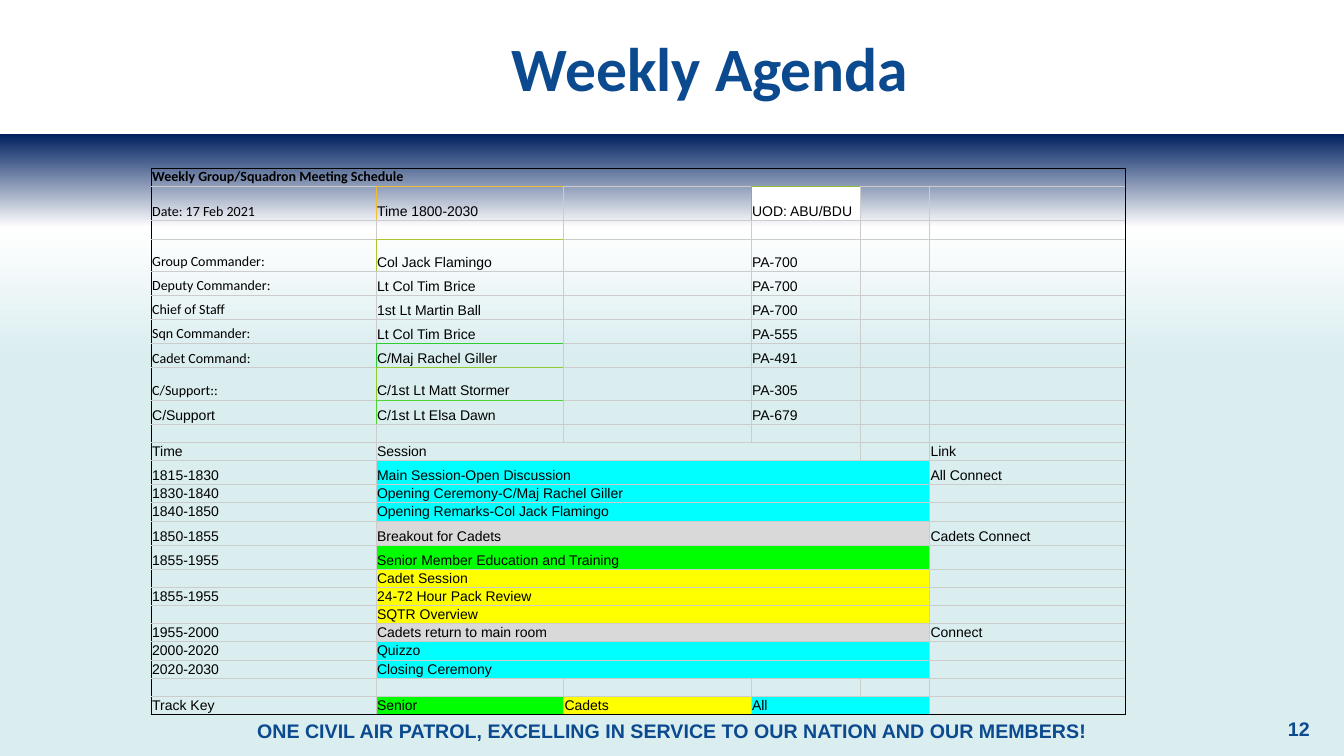
from lxml import etree
from pptx import Presentation
from pptx.dml.color import RGBColor
from pptx.enum.shapes import MSO_SHAPE
from pptx.enum.text import MSO_ANCHOR, PP_ALIGN
from pptx.oxml.ns import qn
from pptx.util import Inches, Pt

RECTANGLE = MSO_SHAPE.RECTANGLE
MIDDLE, BOTTOM = MSO_ANCHOR.MIDDLE, MSO_ANCHOR.BOTTOM
CENTER, RIGHT = PP_ALIGN.CENTER, PP_ALIGN.RIGHT

NAVY, BLUE, BLACK, GRID = "002060", "0B4A8F", "000000", "CCCCCC"
SENIOR, CADETS, ALL, ROOM = "00FF00", "FFFF00", "00FFFF", "D9D9D9"
SHORT, MEDIUM, TALL = 0.18, 0.24, 0.32
COLUMN_WIDTHS = [2.23, 1.86, 1.86, 1.08, 0.69, 1.94]
LAST_LABEL_ROW = 8
ACCENTS = {(1, 1): "F0BE32", (1, 3): "90C032", (3, 1): "B0C532",
           (7, 1): "30CD32", (8, 1): "90CB32", (9, 1): "50D532"}

STAFF = [
    (TALL, "Group Commander:", "Col Jack Flamingo", "PA-700"),
    (MEDIUM, "Deputy Commander:", "Lt Col Tim Brice", "PA-700"),
    (MEDIUM, "Chief of Staff", "1st Lt Martin Ball", "PA-700"),
    (MEDIUM, "Sqn Commander:", "Lt Col Tim Brice", "PA-555"),
    (MEDIUM, "Cadet Command:", "C/Maj Rachel Giller", "PA-491"),
    (TALL, "C/Support::", "C/1st Lt Matt Stormer", "PA-305"),
    (MEDIUM, "C/Support", "C/1st Lt Elsa Dawn", "PA-679"),
]
SESSIONS = [
    (MEDIUM, "1815-1830", "Main Session-Open Discussion", ALL, "All Connect"),
    (SHORT, "1830-1840", "Opening Ceremony-C/Maj Rachel Giller", ALL, ""),
    (SHORT, "1840-1850", "Opening Remarks-Col Jack Flamingo", ALL, ""),
    (MEDIUM, "1850-1855", "Breakout for Cadets", ROOM, "Cadets Connect"),
    (MEDIUM, "1855-1955", "Senior Member Education and Training", SENIOR, ""),
    (SHORT, "", "Cadet Session", CADETS, ""),
    (SHORT, "1855-1955", "24-72 Hour Pack Review", CADETS, ""),
    (SHORT, "", "SQTR Overview", CADETS, ""),
    (SHORT, "1955-2000", "Cadets return to main room", ROOM, "Connect"),
    (SHORT, "2000-2020", "Quizzo", ALL, ""),
    (SHORT, "2020-2030", "Closing Ceremony", ALL, ""),
]


def color(value):
    """Turn a hex string into a colour."""
    return RGBColor.from_string(value)


def plain(*texts):
    """Describe six unfilled, unmerged cells, the last ones empty."""
    return [(text, 1, None) for text in texts + ("",) * (6 - len(texts))]


def agenda_rows():
    """List each row's height and its cells as text, span and fill."""
    rows = [
        (SHORT, [("Weekly Group/Squadron Meeting Schedule", 6, None)]),
        (0.34, plain("Date: 17 Feb 2021", "Time 1800-2030", "")[:3]
         + [("UOD: ABU/BDU", 1, "FFFFFF")] + plain()[:2]),
        (SHORT, plain()),
    ]
    rows += [(height, plain(role, name, "", code)) for height, role, name, code in STAFF]
    rows += [
        (SHORT, plain()),
        (SHORT, [("Time", 1, None), ("Session", 3, None), ("", 1, None), ("Link", 1, None)]),
    ]
    rows += [(height, [(time, 1, None), (session, 4, track), (link, 1, None)])
             for height, time, session, track, link in SESSIONS]
    rows += [
        (SHORT, plain()),
        (SHORT, [("Track Key", 1, None), ("Senior", 1, SENIOR), ("Cadets", 1, CADETS),
                 ("All", 2, ALL), ("", 1, None)]),
    ]
    return rows


class AgendaSlide:
    """Hold the slide and draw its elements in one style."""

    def __init__(self, presentation):
        """Add a title-only slide."""
        self.slide = presentation.slides.add_slide(presentation.slide_layouts[5])

    def add_run(self, paragraph, text, size, font="Arial", fill=BLACK, bold=False):
        """Add a formatted run."""
        run = paragraph.add_run()
        run.text = text
        run.font.name, run.font.size, run.font.bold = font, Pt(size), bold
        run.font.color.rgb = color(fill)

    def title(self, text, left, top, width, height):
        """Place and format the title."""
        shape = self.slide.shapes.title
        shape.left, shape.top = Inches(left), Inches(top)
        shape.width, shape.height = Inches(width), Inches(height)
        shape.text_frame.vertical_anchor = MIDDLE
        paragraph = shape.text_frame.paragraphs[0]
        paragraph.alignment = CENTER
        self.add_run(paragraph, text, 44, "Calibri", BLUE, True)

    def gradient_panel(self, left, top, width, height, stops):
        """Draw a panel that fades from top to bottom."""
        shape = self.slide.shapes.add_shape(
            RECTANGLE, Inches(left), Inches(top), Inches(width), Inches(height))
        shape.shadow.inherit = False
        shape.line.fill.background()
        shape.fill.gradient()
        shape.fill.gradient_angle = 270
        stop_list = next(shape.element.iter(qn("a:gsLst")))
        for old_stop in list(stop_list):
            stop_list.remove(old_stop)
        for percent, value in stops:
            stop = etree.SubElement(stop_list, qn("a:gs"), pos=str(percent * 1000))
            etree.SubElement(stop, qn("a:srgbClr"), val=value)

    def text(self, text, left, top, width, height, alignment):
        """Add a line of bold blue text."""
        shape = self.slide.shapes.add_textbox(
            Inches(left), Inches(top), Inches(width), Inches(height))
        shape.text_frame.word_wrap = True
        paragraph = shape.text_frame.paragraphs[0]
        paragraph.alignment = alignment
        self.add_run(paragraph, text, 14, fill=BLUE, bold=True)

    def cell_text(self, cell, text, font, bold):
        """Write a small, bottom-anchored cell text."""
        cell.margin_left = cell.margin_right = cell.margin_bottom = Inches(0.01)
        cell.margin_top = 0
        cell.vertical_anchor = BOTTOM
        paragraph = cell.text_frame.paragraphs[0]
        if text:
            self.add_run(paragraph, text, 10, font, bold=bold)
        else:
            etree.SubElement(paragraph._p, qn("a:endParaRPr"), sz="800")

    def cell_borders(self, cell, edges):
        """Draw the left, right, top and bottom borders of a cell."""
        properties = cell._tc.get_or_add_tcPr()
        for index, (side, value) in enumerate(zip("LRTB", edges)):
            line = etree.Element(qn(f"a:ln{side}"), w=str(Pt(0.6)))
            if value:
                fill = etree.SubElement(line, qn("a:solidFill"))
                etree.SubElement(fill, qn("a:srgbClr"), val=value)
            else:
                etree.SubElement(line, qn("a:noFill"))
            properties.insert(index, line)

    def table(self, rows, left, top):
        """Build the agenda table with merged sessions and accent borders."""
        last_row, last_column = len(rows) - 1, len(COLUMN_WIDTHS) - 1
        table = self.slide.shapes.add_table(
            len(rows), len(COLUMN_WIDTHS), Inches(left), Inches(top),
            Inches(sum(COLUMN_WIDTHS)), Inches(sum(height for height, _ in rows))).table
        table.first_row = table.horz_banding = False
        for column, width in zip(table.columns, COLUMN_WIDTHS):
            column.width = Inches(width)
        for row, (height, cells) in enumerate(rows):
            table.rows[row].height = Inches(height)
            start = 0
            for text, span, fill in cells:
                end = start + span - 1
                right = BLACK if end == last_column else ACCENTS.get((row, end + 1), GRID)
                if span > 1:
                    table.cell(row, start).merge(table.cell(row, end))
                for column in range(start, end + 1):
                    cell = table.cell(row, column)
                    labelled = column == 0 and row <= LAST_LABEL_ROW
                    self.cell_text(cell, text if column == start else "",
                                   "Calibri" if labelled else "Arial", row == 0)
                    if fill:
                        cell.fill.solid()
                        cell.fill.fore_color.rgb = color(fill)
                    else:
                        cell.fill.background()
                    accent = ACCENTS.get((row, column), GRID)
                    below = ACCENTS.get((row + 1, column), GRID)
                    self.cell_borders(cell, (
                        None if column > start else BLACK if column == 0 else accent,
                        right if column in (start, end) else None,
                        BLACK if row == 0 else accent,
                        BLACK if row == last_row else below))
                start = end + 1


def main():
    """Build and save the agenda slide."""
    presentation = Presentation()
    presentation.slide_width, presentation.slide_height = Inches(13.33), Inches(7.5)
    agenda = AgendaSlide(presentation)
    agenda.gradient_panel(0, 1.33, 13.33, 6.18, [(0, NAVY), (15, "FFFFFF"), (36, "DAEDEF")])
    agenda.text("ONE CIVIL AIR PATROL, EXCELLING IN SERVICE TO OUR NATION AND OUR MEMBERS!",
                0, 7.08, 13.33, 0.34, CENTER)
    agenda.title("Weekly Agenda", 1.42, 0.33, 11.25, 0.67)
    agenda.table(agenda_rows(), 1.5, 1.67)
    agenda.text("12", 12.16, 7.06, 0.93, 0.4, RIGHT)
    presentation.save("out.pptx")


if __name__ == "__main__":
    main()
